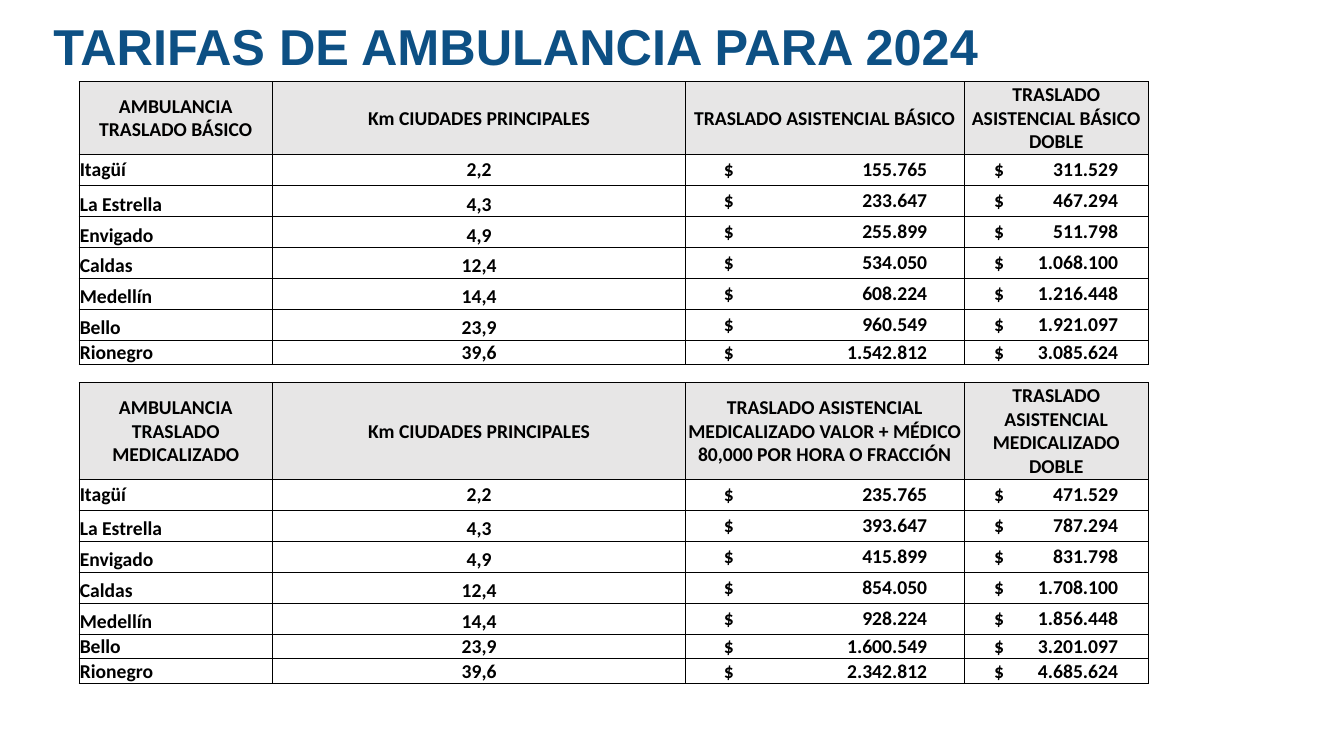
from dataclasses import dataclass
from typing import Optional

from lxml.etree import SubElement
from pptx import Presentation
from pptx.dml.color import RGBColor
from pptx.enum.text import MSO_ANCHOR, MSO_AUTO_SIZE, PP_ALIGN
from pptx.oxml.ns import qn
from pptx.util import Cm, Pt

COLORS = {"title": "0D5084", "text": "000000", "header": "E7E6E6", "border": "000000"}
TITLE_FONT = {"name": "Arial", "size": Pt(36), "bold": True}
CELL_FONT = {"name": "Calibri", "size": Pt(14), "bold": True}
INSETS = {"margin_left": Cm(0.02), "margin_right": Cm(0.02),
          "margin_top": Cm(0.02), "margin_bottom": Cm(0)}
COLUMN_WIDTHS = (4.88, 10.41, 7.01, 4.66)
ROW_HEIGHT, SHORT_ROW, GAP_ROW = 0.78, 0.62, 0.45
KM_HEADING = "Km CIUDADES PRINCIPALES"


@dataclass
class AmountColumn:
    """Place of the currency sign and the right edge of the figures, in cm."""
    sign_left: float
    figures_right: float


@dataclass
class Fare:
    city: str
    km: str
    single: str
    double: str


@dataclass
class Section:
    headings: tuple[str, ...]
    header_height: float
    short_rows: int
    fares: list[Fare]


AMOUNT_COLUMNS = (AmountColumn(0.96, 5.13), AmountColumn(0.76, 3.13))

SECTIONS = [
    Section(("AMBULANCIA TRASLADO BÁSICO", KM_HEADING, "TRASLADO ASISTENCIAL BÁSICO",
             "TRASLADO ASISTENCIAL BÁSICO DOBLE"), 1.84, 1, [
        Fare("Itagüí", "2,2", "155.765", "311.529"),
        Fare("La Estrella", "4,3", "233.647", "467.294"),
        Fare("Envigado", "4,9", "255.899", "511.798"),
        Fare("Caldas", "12,4", "534.050", "1.068.100"),
        Fare("Medellín", "14,4", "608.224", "1.216.448"),
        Fare("Bello", "23,9", "960.549", "1.921.097"),
        Fare("Rionegro", "39,6", "1.542.812", "3.085.624"),
    ]),
    Section(("AMBULANCIA TRASLADO MEDICALIZADO", KM_HEADING,
             "TRASLADO ASISTENCIAL MEDICALIZADO VALOR + MÉDICO 80,000 POR HORA O FRACCIÓN",
             "TRASLADO ASISTENCIAL MEDICALIZADO DOBLE"), 2.43, 2, [
        Fare("Itagüí", "2,2", "235.765", "471.529"),
        Fare("La Estrella", "4,3", "393.647", "787.294"),
        Fare("Envigado", "4,9", "415.899", "831.798"),
        Fare("Caldas", "12,4", "854.050", "1.708.100"),
        Fare("Medellín", "14,4", "928.224", "1.856.448"),
        Fare("Bello", "23,9", "1.600.549", "3.201.097"),
        Fare("Rionegro", "39,6", "2.342.812", "4.685.624"),
    ]),
]


def apply_format(target, values: dict) -> None:
    for attribute, value in values.items():
        setattr(target, attribute, value)


def prepare_cell(cell, fill: Optional[str] = None, sides: bool = True) -> None:
    """Set the insets, borders and fill; borders come first in the cell's XML."""
    apply_format(cell, INSETS)
    properties = cell._tc.get_or_add_tcPr()
    for edge in ("lnL", "lnR", "lnT", "lnB"):
        line = SubElement(properties, qn(f"a:{edge}"), w=str(Pt(0.5)))
        if sides or edge in ("lnT", "lnB"):
            paint = SubElement(line, qn("a:solidFill"))
            SubElement(paint, qn("a:srgbClr"), val=COLORS["border"])
        else:
            SubElement(line, qn("a:noFill"))
    if fill:
        cell.fill.solid()
        cell.fill.fore_color.rgb = RGBColor.from_string(fill)
    else:
        cell.fill.background()


def write_cell(cell, text: str, align=PP_ALIGN.CENTER, anchor=MSO_ANCHOR.MIDDLE) -> None:
    cell.vertical_anchor = anchor
    paragraph = cell.text_frame.paragraphs[0]
    paragraph.alignment = align
    run = paragraph.add_run()
    run.text = text
    apply_format(run.font, CELL_FONT)
    run.font.color.rgb = RGBColor.from_string(COLORS["text"])


def write_amount(cell, amount: str, column: AmountColumn) -> None:
    cell.margin_left = Cm(column.sign_left)
    properties = cell.text_frame.paragraphs[0]._p.get_or_add_pPr()
    stops = SubElement(properties, qn("a:tabLst"))
    SubElement(stops, qn("a:tab"), pos=str(Cm(column.figures_right)), algn="r")
    write_cell(cell, f"$\t{amount}", PP_ALIGN.LEFT)


def write_gap(row) -> None:
    row.height = Cm(GAP_ROW)
    for cell in row.cells:
        prepare_cell(cell, sides=False)
        SubElement(cell.text_frame.paragraphs[0]._p, qn("a:endParaRPr"), sz="1000")


def write_header(row, section: Section) -> None:
    row.height = Cm(section.header_height)
    for cell, heading in zip(row.cells, section.headings):
        prepare_cell(cell, COLORS["header"])
        write_cell(cell, heading)


def write_fare(row, fare: Fare, height: float, anchor) -> None:
    row.height = Cm(height)
    for cell in row.cells:
        prepare_cell(cell)
    city, km, *amounts = row.cells
    write_cell(city, fare.city, PP_ALIGN.LEFT, anchor)
    write_cell(km, fare.km, anchor=anchor)
    for cell, amount, column in zip(amounts, (fare.single, fare.double), AMOUNT_COLUMNS):
        write_amount(cell, amount, column)


def add_title(slide) -> None:
    title = slide.shapes.title
    apply_format(title, {"left": Cm(1.09), "top": Cm(0), "width": Cm(25.22), "height": Cm(2.06)})
    apply_format(title.text_frame, {"vertical_anchor": MSO_ANCHOR.BOTTOM, "word_wrap": True,
                                    "auto_size": MSO_AUTO_SIZE.NONE})
    paragraph = title.text_frame.paragraphs[0]
    apply_format(paragraph, {"alignment": PP_ALIGN.LEFT, "line_spacing": 0.9})
    run = paragraph.add_run()
    run.text = "TARIFAS DE AMBULANCIA PARA 2024"
    apply_format(run.font, TITLE_FONT)
    run.font.color.rgb = RGBColor.from_string(COLORS["title"])


def add_fares(slide) -> None:
    row_count = sum(len(section.fares) + 1 for section in SECTIONS) + len(SECTIONS) - 1
    table = slide.shapes.add_table(row_count, len(COLUMN_WIDTHS), Cm(1.99), Cm(2.05),
                                   Cm(sum(COLUMN_WIDTHS)), Cm(15)).table
    apply_format(table, {"first_row": False, "horz_banding": False})
    for column, width in zip(table.columns, COLUMN_WIDTHS):
        column.width = Cm(width)
    rows = iter(table.rows)
    for position, section in enumerate(SECTIONS):
        if position:
            write_gap(next(rows))
        write_header(next(rows), section)
        first_short = len(section.fares) - section.short_rows
        for index, fare in enumerate(section.fares):
            height = ROW_HEIGHT if index < first_short else SHORT_ROW
            anchor = MSO_ANCHOR.BOTTOM if index else MSO_ANCHOR.MIDDLE
            write_fare(next(rows), fare, height, anchor)


def main() -> None:
    presentation = Presentation()
    presentation.slide_width, presentation.slide_height = Cm(33.87), Cm(19.05)
    slide = presentation.slides.add_slide(presentation.slide_layouts[5])
    add_title(slide)
    add_fares(slide)
    presentation.save("out.pptx")


if __name__ == "__main__":
    main()
